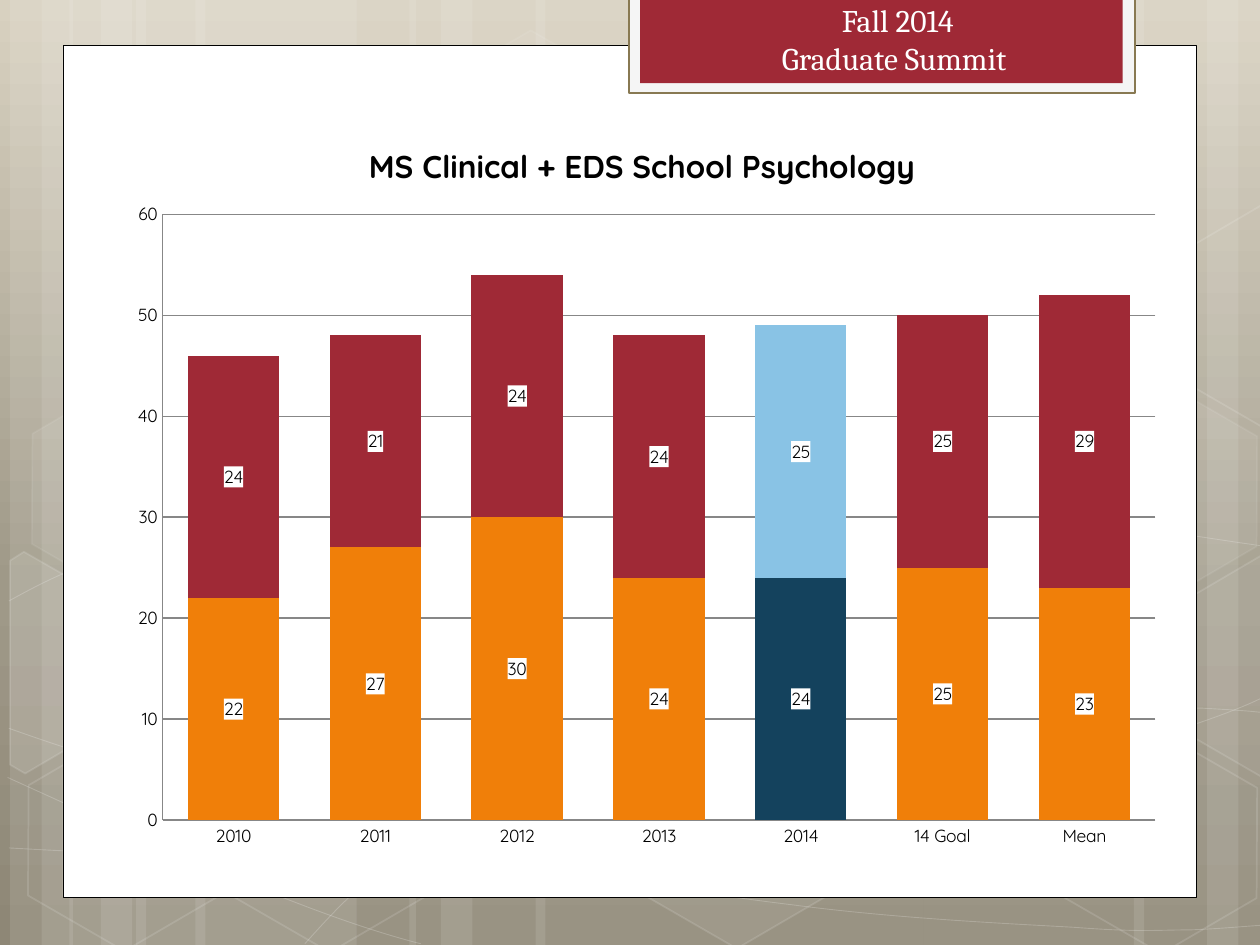
from copy import deepcopy
from lxml import etree
from pptx import Presentation
from pptx.chart.data import CategoryChartData
from pptx.dml.color import RGBColor
from pptx.enum.chart import XL_CHART_TYPE, XL_LABEL_POSITION, XL_TICK_MARK
from pptx.enum.shapes import MSO_SHAPE
from pptx.enum.text import MSO_ANCHOR, MSO_AUTO_SIZE, PP_ALIGN
from pptx.oxml import parse_xml
from pptx.oxml.ns import nsdecls, qn
from pptx.util import Pt

RECT, HEX = MSO_SHAPE.RECTANGLE, MSO_SHAPE.HEXAGON
STACK, MID, NONE = XL_CHART_TYPE.COLUMN_STACKED, XL_LABEL_POSITION.CENTER, XL_TICK_MARK.NONE
TOP, CENTER, FIXED = MSO_ANCHOR.TOP, PP_ALIGN.CENTER, MSO_AUTO_SIZE.NONE
PX = 9144
THEME = {
    "white": "FFFFFF", "black": "000000", "mat": "F5F5F5", "edge": "887952",
    "red": "9F2936", "orange": "F07F09", "navy": "14425D", "sky": "89C3E5",
    "grid": "878787", "back": [(0, "D8D1C0"), (62, "9F9988"), (100, "8E8776")],
    "head": Pt(18), "title": Pt(18), "body": Pt(10),
    "serif": "Cambria", "sans": "Quicksand",
}


def paint(shape, fill=None, line=None, width=1, alpha=100, clear=100):
    shape.shadow.inherit = False
    for form, tone, part in ((shape.fill, fill, alpha), (shape.line.fill, line, clear)):
        if tone is None:
            form.background()
            continue
        form.solid()
        form.fore_color.rgb = RGBColor.from_string(THEME[tone])
        if part < 100:
            color = form._xPr.find(qn("a:solidFill"))[0]
            etree.SubElement(color, qn("a:alpha")).set("val", str(part * 1000))
    if line:
        shape.line.width = Pt(width)


def style(font, name, size, tone, bold=False):
    for key, value in {"name": name, "size": size, "bold": bold}.items():
        setattr(font, key, value)
    font.color.rgb = RGBColor.from_string(THEME[tone])


deck = Presentation()
deck.slide_width, deck.slide_height = 1000 * PX, 750 * PX
slide = deck.slides.add_slide(deck.slide_layouts[5])
shapes = slide.shapes

back = slide.background.fill
back.gradient()
back.gradient_angle = 270
stops = next(slide._element.iter(qn("a:gsLst")))
stops.insert(1, deepcopy(stops[0]))
for stop, (place, tone) in zip(stops, THEME["back"]):
    stop.set("pos", str(place * 1000))
    stop.remove(stop[0])
    etree.SubElement(stop, qn("a:srgbClr")).set("val", tone)

BANDS = [(108, 175), (8, 50), (33, 83), (155, 175), (55, 50), (80, 83),
         (733, 175), (958, 50), (900, 83), (425, 308), (325, 50), (350, 83)]
for left, wide in BANDS:
    band = shapes.add_shape(RECT, left * PX, 0, wide * PX, 750 * PX)
    paint(band, "white", alpha=10)

CURVES = [
    [(7, 673), (61, 676), (115, 679), (190, 678), (265, 677), (358, 675), (458, 665),
     (558, 655), (700, 636), (792, 617), (883, 598), (977, 568), (1007, 551)],
    [(7, 477), (36, 461), (65, 446), (121, 431), (178, 416), (259, 394), (347, 387),
     (436, 380), (544, 379), (654, 387), (764, 395), (947, 426), (1007, 434)],
    [(6, 617), (127, 672), (247, 727), (334, 749)],
    [(7, 578), (38, 589), (70, 600), (128, 616), (186, 631), (273, 656), (357, 673),
     (440, 690), (545, 708), (628, 718), (711, 729), (800, 733), (853, 736),
     (905, 740), (919, 738), (945, 738), (971, 737), (989, 735), (1007, 734)],
    [(242, 749), (260, 729), (278, 709), (302, 691), (326, 673), (360, 653), (388, 639),
     (416, 625), (433, 619), (470, 609), (506, 599), (573, 585), (608, 578),
     (644, 571), (649, 571), (680, 569), (711, 566), (760, 563), (794, 562),
     (829, 561), (886, 562), (886, 562), (908, 562), (931, 562), (953, 562),
     (971, 563), (988, 564), (997, 565), (1006, 566), (1003, 565), (1006, 566)],
]
for knots in CURVES:
    pen = shapes.build_freeform(*knots[0], scale=PX)
    pen.add_line_segments(knots[1:], close=False)
    curve = pen.convert_to_shape()
    paint(curve, line="white", width=0.5, clear=20)
    route = next(curve._element.iter(qn("a:path")))
    legs = route.findall(qn("a:lnTo"))
    for at in range(0, len(legs), 3):
        bend = etree.SubElement(route, qn("a:cubicBezTo"))
        for leg in legs[at:at + 3]:
            bend.append(leg[0])
            route.remove(leg)

CELLS = [(334, 36, 4, 8), (497, 589, 6, 12), (11, 591, 0, 12), (14, 312, 7, 8),
         (174, 592, 0, 12), (753, 453, 10, 12), (834, 593, 0, 12), (834, 314, 7, 8)]
for left, top, alpha, clear in CELLS:
    cell = shapes.add_shape(HEX, left * PX, top * PX, 175 * PX, 152 * PX)
    cell.rotation = 30
    cell.adjustments[0] = 0.285
    paint(cell, "white" if alpha else None, "white", 1, alpha, clear)

SHARDS = [
    (10, [(8, 445), (19, 438), (96, 482), (95, 570), (20, 614), (8, 607)]),
    (4, [(926, 485), (1001, 441), (1009, 446), (1009, 613), (1002, 617), (926, 573)]),
    (0, [(926, 207), (1001, 163), (1010, 168), (1009, 335), (1002, 339), (926, 295)]),
]
for alpha, dots in SHARDS:
    pen = shapes.build_freeform(*dots[0], scale=PX)
    pen.add_line_segments(dots[1:])
    paint(pen.convert_to_shape(), "white" if alpha else None, "white", 1, alpha, 12)

PANELS = [(50, 36, 900, 676, "white", "black", 0.5),
          (499, -2, 402, 76, "mat", "edge", 1.25),
          (508, -2, 383, 68, "red", None, 0)]
for left, top, wide, high, fill, line, width in PANELS:
    panel = shapes.add_shape(RECT, left * PX, top * PX, wide * PX, high * PX)
    paint(panel, fill, line, width)

head = shapes.title
shapes._spTree.append(head._element)
for key, value in {"left": 525, "top": -4, "width": 375, "height": 71}.items():
    setattr(head, key, value * PX)
frame = head.text_frame
frame.text = "Fall 2014\nGraduate Summit "
for key, value in {"word_wrap": True, "auto_size": FIXED, "vertical_anchor": TOP}.items():
    setattr(frame, key, value)
for para in frame.paragraphs:
    para.alignment = CENTER
    style(para.runs[0].font, THEME["serif"], THEME["head"], "white")

WIDE, HIGH = 842, 592
data = CategoryChartData()
data.categories = ["2010", "2011", "2012", "2013", "2014", "14 Goal", "Mean"]
data.add_series("Series 1", [22, 27, 30, 24, 24, 25, 23])
data.add_series("Series 2", [24, 21, 24, 24, 25, 25, 29])
chart = shapes.add_chart(STACK, 92 * PX, 92 * PX, WIDE * PX, HIGH * PX, data).chart
style(chart.font, THEME["sans"], THEME["body"], "black")
chart.has_legend = False
label = chart.chart_title.text_frame
label.text = "MS Clinical + EDS School Psychology "
style(label.paragraphs[0].runs[0].font, THEME["sans"], THEME["title"], "black", True)

plot = chart.plots[0]
for key, value in {"gap_width": 55, "overlap": 100, "vary_by_categories": False}.items():
    setattr(plot, key, value)
for axis in (chart.category_axis, chart.value_axis):
    for key, value in {"major_tick_mark": NONE, "minor_tick_mark": NONE}.items():
        setattr(axis, key, value)
    axis.format.line.color.rgb = RGBColor.from_string(THEME["grid"])
scale = chart.value_axis
for key, value in {"minimum_scale": 0, "maximum_scale": 60, "major_unit": 10,
                   "has_major_gridlines": True}.items():
    setattr(scale, key, value)
scale.major_gridlines.format.line.color.rgb = RGBColor.from_string(THEME["grid"])

for bar, tone, mark in zip(plot.series, ("orange", "red"), ("navy", "sky")):
    for part, hue in ((bar, tone), (bar.points[4], mark)):
        part.format.fill.solid()
        part.format.fill.fore_color.rgb = RGBColor.from_string(THEME[hue])
    tags = bar.data_labels
    style(tags.font, THEME["sans"], THEME["body"], "black")
    for key, value in {"show_value": True, "position": MID}.items():
        setattr(tags, key, value)
    tags._element.find(qn("c:txPr")).addprevious(parse_xml(
        f'<c:spPr {nsdecls("c", "a")}><a:solidFill><a:srgbClr val="{THEME["white"]}"/>'
        '</a:solidFill></c:spPr>'))

area = chart._chartSpace.chart.plotArea
for old in area.findall(qn("c:layout")):
    area.remove(old)
place = etree.Element(qn("c:layout"))
box = etree.SubElement(place, qn("c:manualLayout"))
for key, value in {"layoutTarget": "inner", "xMode": "edge", "yMode": "edge",
                   "x": 37 / WIDE, "y": 78 / HIGH,
                   "w": 788 / WIDE, "h": 481 / HIGH}.items():
    etree.SubElement(box, qn(f"c:{key}")).set("val", str(value))
area.insert(0, place)

deck.save("out.pptx")
